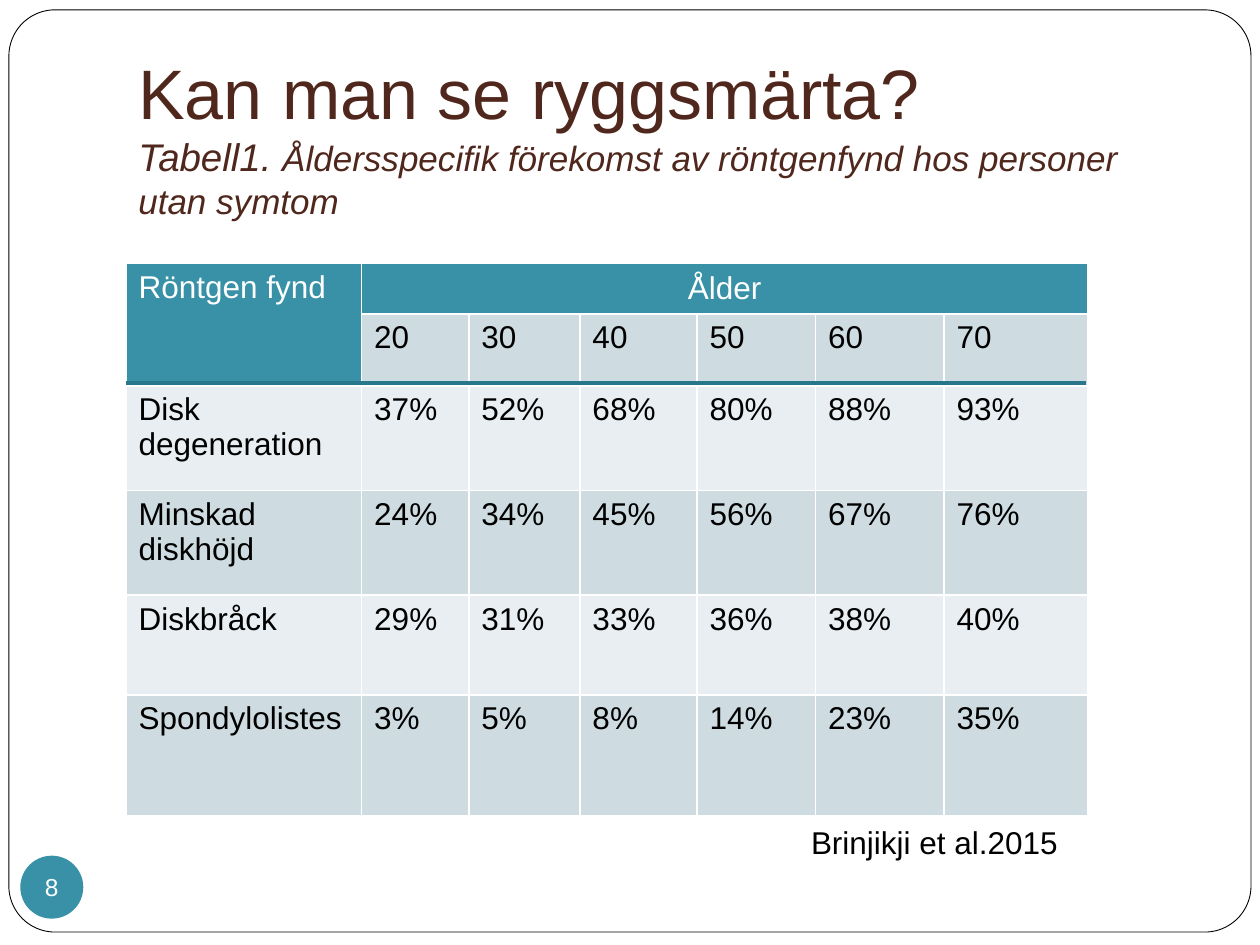
from pptx import Presentation
from pptx.dml.color import RGBColor
from pptx.enum.shapes import MSO_CONNECTOR as Link, MSO_SHAPE as Kind
from pptx.enum.text import MSO_ANCHOR as Anchor, PP_ALIGN as Align
from pptx.oxml.ns import qn
from pptx.util import Cm, Pt
from lxml.etree import SubElement

TEAL, WHITE, BLACK, BROWN = "3891A7", "FFFFFF", "000000", "4F271C"
BANDS = ["CEDCE1", "E8EEF1"]
COLS = [4.75, 2.16, 2.24, 2.36, 2.39, 2.59, 2.9]
ROWS = [0.94, 1.45, 2.11, 2.11, 2.01, 2.44]
DATA = [
    ["Röntgen fynd", "Ålder"],
    ["", "20", "30", "40", "50", "60", "70"],
    ["Disk degeneration", "37%", "52%", "68%", "80%", "88%", "93%"],
    ["Minskad diskhöjd", "24%", "34%", "45%", "56%", "67%", "76%"],
    ["Diskbråck", "29%", "31%", "33%", "36%", "38%", "40%"],
    ["Spondylolistes", "3%", "5%", "8%", "14%", "23%", "35%"],
]


def color(code):
    return RGBColor.from_string(code)


def paint(item, code):
    item.fill.solid()
    item.fill.fore_color.rgb = color(code)


def style(para, size, code, align=Align.LEFT):
    para.alignment = align
    para.font.name = "Arial"
    para.font.size = Pt(size)
    para.font.color.rgb = color(code)


def shape(slide, kind, box, fill, line=None):
    item = slide.shapes.add_shape(kind, *map(Cm, box))
    item.shadow.inherit = False
    paint(item, fill)
    if line:
        item.line.color.rgb = color(line)
        item.line.width = Pt(0.5)
    else:
        item.line.fill.background()
    return item


def textbox(slide, box):
    frame = slide.shapes.add_textbox(*map(Cm, box)).text_frame
    frame.word_wrap = True
    return frame


def title(slide):
    frame = textbox(slide, (2.54, 0.76, 21.59, 3.96))
    frame.vertical_anchor = Anchor.BOTTOM
    frame.margin_bottom = Cm(0.25)
    para = frame.paragraphs[0]
    style(para, 40, BROWN)
    para.add_run().text = "Kan man se ryggsmärta?"
    para.add_line_break()
    subs = [
        ("Tabell1. ", 22),
        ("Åldersspecifik förekomst av röntgenfynd hos personer utan symtom", 20),
    ]
    for text, size in subs:
        run = para.add_run()
        run.text = text
        run.font.size = Pt(size)
        run.font.italic = True


def badge(slide):
    item = shape(slide, Kind.OVAL, (0.41, 17.25, 1.27, 1.27), TEAL)
    frame = item.text_frame
    frame.word_wrap = False
    frame.vertical_anchor = Anchor.MIDDLE
    frame.margin_left = frame.margin_right = 0
    frame.margin_top = frame.margin_bottom = 0
    frame.text = "8"
    style(frame.paragraphs[0], 14, WHITE, Align.CENTER)


def border(cell):
    props = cell._tc.get_or_add_tcPr()
    for spot, side in enumerate(["lnL", "lnR", "lnT", "lnB"]):
        edge = SubElement(props, qn(f"a:{side}"), w=str(Pt(1)))
        fill = SubElement(edge, qn("a:solidFill"))
        SubElement(fill, qn("a:srgbClr"), val=WHITE)
        props.insert(spot, edge)


def table(slide):
    box = map(Cm, (2.54, 5.31, sum(COLS), sum(ROWS)))
    grid = slide.shapes.add_table(len(ROWS), len(COLS), *box).table
    for col, width in zip(grid.columns, COLS):
        col.width = Cm(width)
    for row, height in zip(grid.rows, ROWS):
        row.height = Cm(height)
    grid.cell(0, 0).merge(grid.cell(1, 0))
    grid.cell(0, 1).merge(grid.cell(0, len(COLS) - 1))
    for r in range(len(ROWS)):
        for c in range(len(COLS)):
            cell = grid.cell(r, c)
            head = r == 0 or (r == 1 and c == 0)
            paint(cell, TEAL if head else BANDS[(r + 1) % 2])
            border(cell)
            if c < len(DATA[r]) and DATA[r][c]:
                cell.text = DATA[r][c]
                style(cell.text_frame.paragraphs[0], 18, WHITE if head else BLACK)
    age = grid.cell(0, 1)
    age.vertical_anchor = Anchor.MIDDLE
    age.text_frame.paragraphs[0].alignment = Align.CENTER


def rule(slide):
    ends = map(Cm, (2.54, 7.72, 21.89, 7.72))
    item = slide.shapes.add_connector(Link.STRAIGHT, *ends)
    item.line.color.rgb = color("28778A")
    item.line.width = Pt(2.25)
    SubElement(item._element.spPr, qn("a:effectLst"))


def credit(slide):
    frame = textbox(slide, (16.1, 16.46, 6.81, 1.02))
    frame.text = "Brinjikji et al.2015"
    style(frame.paragraphs[0], 18, BLACK)


def main():
    deck = Presentation()
    deck.slide_width, deck.slide_height = Cm(25.4), Cm(19.05)
    slide = deck.slides.add_slide(deck.slide_layouts[6])
    card = shape(slide, Kind.ROUNDED_RECTANGLE, (0.18, 0.2, 25.04, 18.59), WHITE, BLACK)
    card.adjustments[0] = 0.05
    title(slide)
    badge(slide)
    table(slide)
    rule(slide)
    credit(slide)
    deck.save("out.pptx")


if __name__ == "__main__":
    main()
